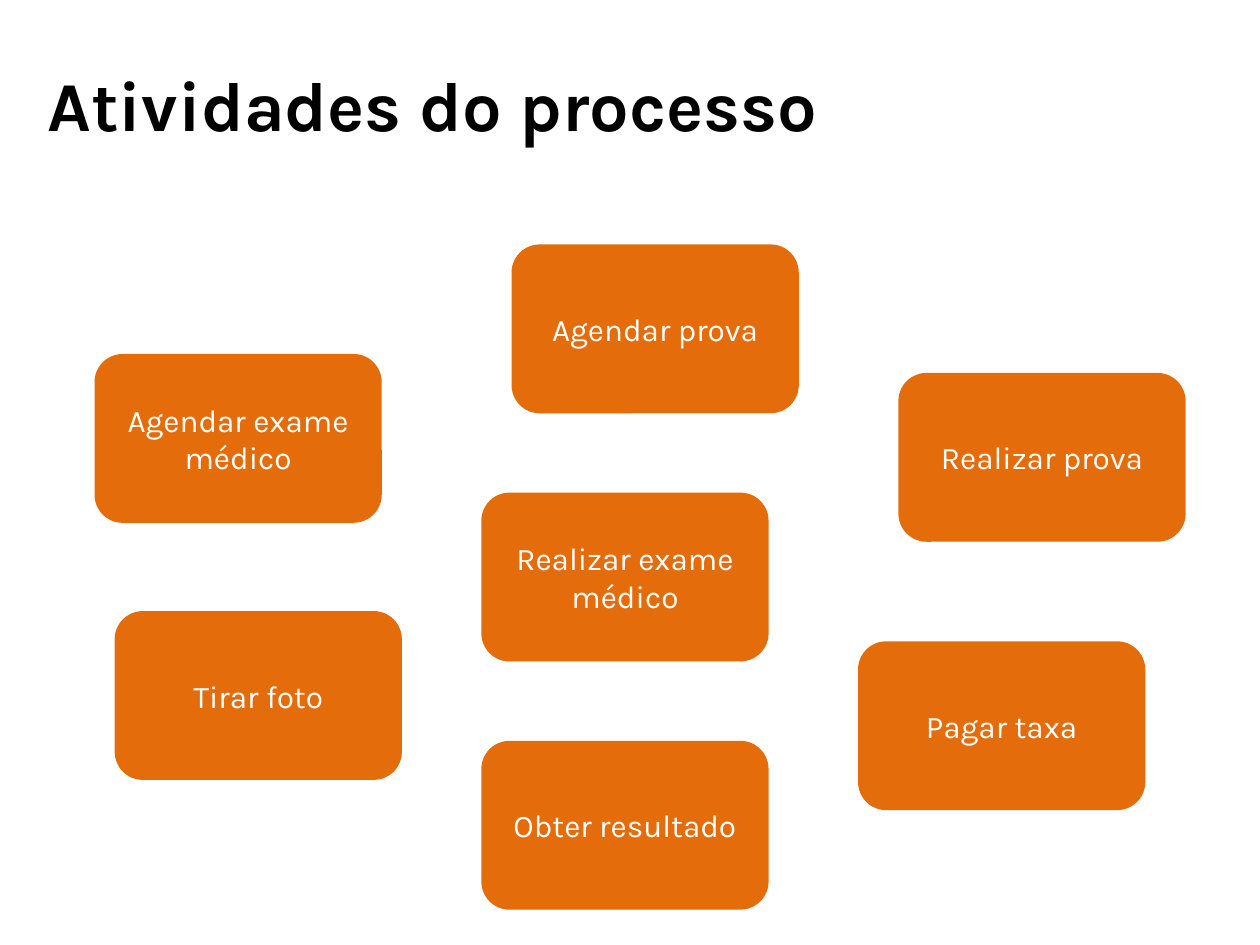
"""Build a slide with the activities of a process as scattered rounded boxes."""
from pptx import Presentation
from pptx.dml.color import RGBColor
from pptx.enum.shapes import MSO_SHAPE
from pptx.enum.text import MSO_ANCHOR, PP_ALIGN
from pptx.util import Inches, Pt

ROUNDED = MSO_SHAPE.ROUNDED_RECTANGLE
MIDDLE = MSO_ANCHOR.MIDDLE
LEFT, CENTER = PP_ALIGN.LEFT, PP_ALIGN.CENTER
FONT = "Karla"
ORANGE, WHITE, BLACK = "E46C0A", "FFFFFF", "000000"
BOX_WIDTH, BOX_HEIGHT = Inches(2.28), Inches(1.34)
ACTIVITIES = [
    ("Agendar exame médico", 0.75, 2.81),
    ("Agendar prova", 4.06, 1.94),
    ("Realizar exame médico", 3.82, 3.91),
    ("Realizar prova", 7.13, 2.96),
    ("Obter resultado", 3.82, 5.88),
    ("Tirar foto", 0.91, 4.85),
    ("Pagar taxa", 6.81, 5.09),
]


def color(value):
    return RGBColor.from_string(value)


def write(box, text, size, text_color, alignment, bold=False):
    frame = box.text_frame
    frame.word_wrap = True
    frame.vertical_anchor = MIDDLE
    frame.text = text
    para = frame.paragraphs[0]
    para.alignment = alignment
    font = para.runs[0].font
    font.name = FONT
    font.size = Pt(size)
    font.bold = bold
    font.color.rgb = color(text_color)


deck = Presentation()
deck.slide_width, deck.slide_height = Inches(10), Inches(7.5)
page = deck.slides.add_slide(deck.slide_layouts[6])

title = page.shapes.add_textbox(Inches(0.28), Inches(0.02), Inches(9.45), Inches(1.61))
write(title, "Atividades do processo", 40, BLACK, LEFT, bold=True)

for activity, left, top in ACTIVITIES:
    box = page.shapes.add_shape(ROUNDED, Inches(left), Inches(top), BOX_WIDTH, BOX_HEIGHT)
    box.shadow.inherit = False
    box.fill.solid()
    box.fill.fore_color.rgb = color(ORANGE)
    box.line.fill.background()
    write(box, activity, 18, WHITE, CENTER)

deck.save("out.pptx")
